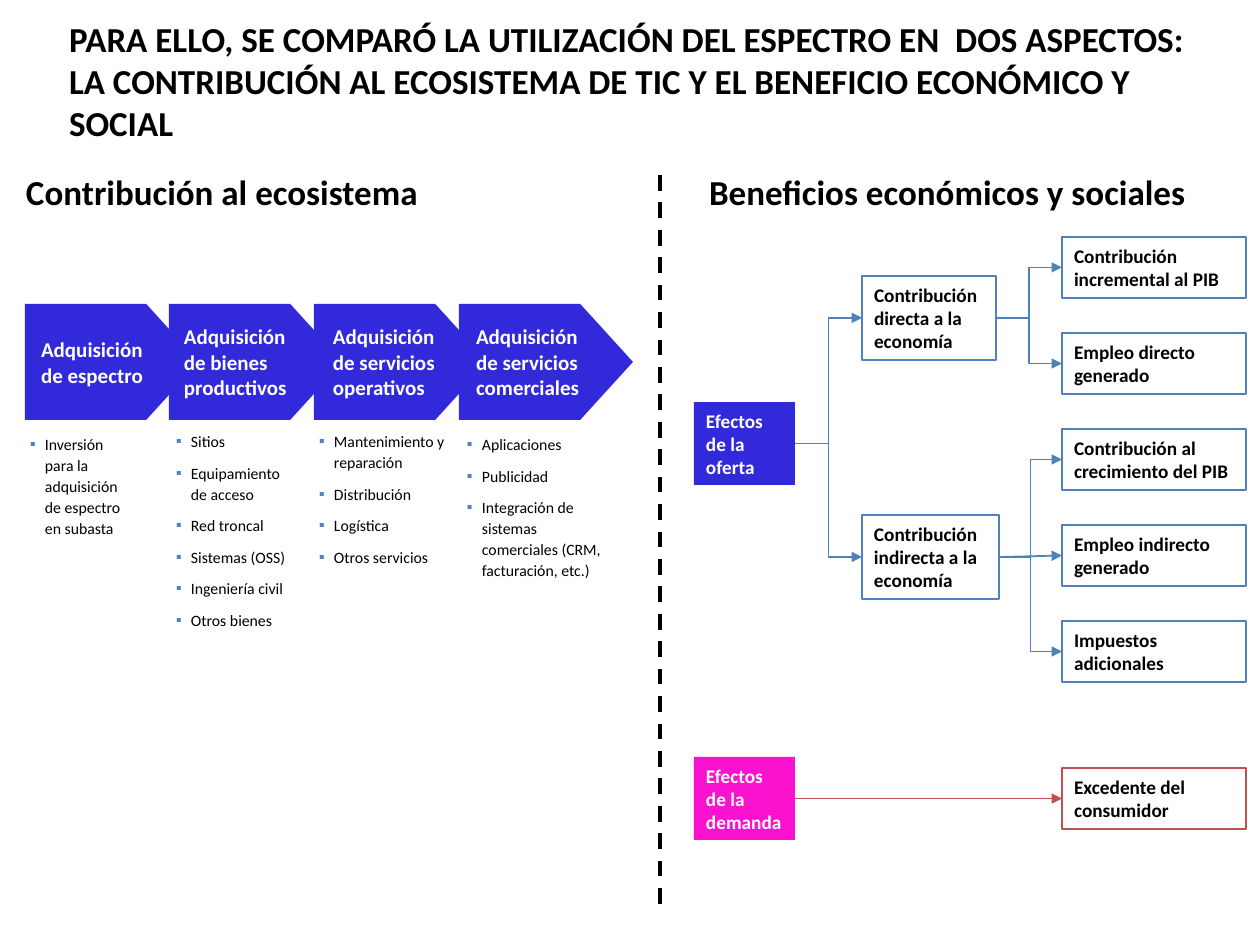
"""Build the slide on spectrum use: ecosystem contribution and economic benefits."""
from pptx import Presentation
from pptx.dml.color import RGBColor
from pptx.enum.dml import MSO_LINE_DASH_STYLE as Dash
from pptx.enum.shapes import MSO_CONNECTOR as Connector, MSO_SHAPE as Shape
from pptx.enum.text import MSO_ANCHOR as Anchor, MSO_AUTO_SIZE as AutoSize, PP_ALIGN as Align
from pptx.oxml.ns import qn
from pptx.util import Pt
from lxml.etree import SubElement

COLORS = {"black": "000000", "white": "FFFFFF", "indigo": "322ADA",
          "magenta": "FA12CE", "blue": "4F81BD", "red": "C0504D"}
SCALE = 914400 / 126
LEFT_SITE, RIGHT_SITE = 1, 3


def px(*lengths):
    return [round(length * SCALE) for length in lengths]


def rgb(name):
    return RGBColor.from_string(COLORS[name])


def set_values(target, **values):
    for name, value in values.items():
        setattr(target, name, value)


class SlideBuilder:
    def __init__(self, slide, font="Calibri"):
        self.slide, self.font = slide, font

    def set_text(self, shape, lines, size, color="black", bold=True, inset=(0, 0),
                 anchor=Anchor.TOP):
        frame = shape.text_frame
        frame.text = "\n".join(lines)
        across, down = px(*inset)
        set_values(frame, word_wrap=True, auto_size=AutoSize.NONE, vertical_anchor=anchor,
                   margin_left=across, margin_right=across, margin_top=down, margin_bottom=down)
        for paragraph in frame.paragraphs:
            paragraph.alignment = Align.LEFT
            for run in paragraph.runs:
                set_values(run.font, name=self.font, size=Pt(size), bold=bold)
                run.font.color.rgb = rgb(color)
        return shape

    def place(self, shape, *box):
        set_values(shape, **dict(zip(("left", "top", "width", "height"), px(*box))))
        return shape

    def title(self, text, *box):
        self.set_text(self.place(self.slide.shapes.title, *box), [text], 20)

    def text(self, text, size, color, *box):
        self.set_text(self.slide.shapes.add_textbox(*px(*box)), [text], size, color)

    def bullets(self, index, items, *box):
        shape = self.place(self.slide.placeholders[index], *box)
        self.set_text(shape, items, 9, bold=False)
        for paragraph in shape.text_frame.paragraphs:
            set_values(paragraph, line_spacing=Pt(12), space_before=Pt(6))
            properties = paragraph._p.get_or_add_pPr()
            indent = px(15)[0]
            properties.set("marL", str(indent))
            properties.set("indent", str(-indent))
            color = SubElement(properties, qn("a:buClr"))
            SubElement(color, qn("a:srgbClr"), val=COLORS["blue"])
            SubElement(properties, qn("a:buFont"), typeface=self.font)
            SubElement(properties, qn("a:buChar"), char="▪")

    def shape(self, kind, *box, fill=None, line=None):
        shape = self.slide.shapes.add_shape(kind, *px(*box))
        shape.shadow.inherit = False
        for part, color in ((shape.fill, fill), (shape.line.fill, line)):
            if color:
                part.solid()
                part.fore_color.rgb = rgb(color)
            else:
                part.background()
        if line:
            shape.line.width = Pt(1)
        return shape

    def arrow_block(self, *box):
        self.shape(Shape.PENTAGON, *box, fill="indigo").adjustments[0] = 0.455

    def box(self, text, *box, fill=None, line=None):
        shape = self.shape(Shape.RECTANGLE, *box, fill=fill, line=line)
        return self.set_text(shape, [text], 11, "white" if fill else "black",
                             inset=(12, 6), anchor=Anchor.MIDDLE)

    def line(self, kind, color, width, *ends):
        connector = self.slide.shapes.add_connector(kind, *px(*ends))
        connector.line.color.rgb = rgb(color)
        connector.line.width = Pt(width)
        SubElement(connector._element.spPr, qn("a:effectLst"))
        return connector

    def divider(self, *ends):
        self.line(Connector.STRAIGHT, "black", 2.25, *ends).line.dash_style = Dash.DASH

    def arrow(self, source, target, color="blue", kind=Connector.ELBOW):
        connector = self.line(kind, color, 1, 0, 0, 0, 0)
        connector.begin_connect(source, RIGHT_SITE)
        connector.end_connect(target, LEFT_SITE)
        outline = connector._element.spPr.find(qn("a:ln"))
        SubElement(outline, qn("a:tailEnd"), type="triangle")


STAGES = [
    ("Adquisición de espectro", (41, 337, 121, 50), (30, 433, 95, 105),
     ["Inversión para la adquisición de espectro en subasta"]),
    ("Adquisición de bienes productivos", (184, 324, 127, 77), (176, 430, 116, 199),
     ["Sitios", "Equipamiento de acceso", "Red troncal", "Sistemas (OSS)",
      "Ingeniería civil", "Otros bienes"]),
    ("Adquisición de servicios operativos", (333, 324, 127, 77), (319, 430, 126, 137),
     ["Mantenimiento y reparación", "Distribución", "Logística", "Otros servicios"]),
    ("Adquisición de servicios comerciales", (476, 324, 122, 77), (467, 433, 136, 147),
     ["Aplicaciones", "Publicidad",
      "Integración de sistemas comerciales (CRM, facturación, etc.)"]),
]
OUTCOMES = ["Contribución incremental al PIB", "Empleo directo generado",
            "Contribución al crecimiento del PIB", "Empleo indirecto generado",
            "Impuestos adicionales"]


def main():
    presentation = Presentation()
    set_values(presentation, **dict(zip(("slide_width", "slide_height"), px(1260, 945))))
    builder = SlideBuilder(presentation.slides.add_slide(presentation.slide_layouts[4]))

    builder.title("PARA ELLO, SE COMPARÓ LA UTILIZACIÓN DEL ESPECTRO EN  DOS ASPECTOS: "
                  "LA CONTRIBUCIÓN AL ECOSISTEMA DE TIC Y EL BENEFICIO ECONÓMICO Y SOCIAL",
                  69, 17, 1126, 127)
    builder.text("Contribución al ecosistema", 20, "black", 26, 170, 432, 43)
    builder.text("Beneficios económicos y sociales", 20, "black", 709, 170, 496, 43)
    builder.divider(660, 175, 660, 906)

    for index, (name, label_box, list_box, items) in enumerate(STAGES):
        builder.arrow_block(25 + index * 434 // 3, 304, 174, 116)
        builder.text(name, 12, "white", *label_box)
        builder.bullets(index + 1, items, *list_box)

    supply = builder.box("Efectos de la oferta", 694, 402, 101, 83, fill="indigo")
    demand = builder.box("Efectos de la demanda", 694, 757, 101, 83, fill="magenta")
    direct = builder.box("Contribución directa a la economía", 862, 276, 134, 84, line="blue")
    indirect = builder.box("Contribución indirecta a la economía", 862, 515, 137, 84, line="blue")
    outcomes = [builder.box(text, 1062, 237 + 96 * row, 184, 61, line="blue")
                for row, text in enumerate(OUTCOMES)]
    surplus = builder.box("Excedente del consumidor", 1062, 768, 184, 61, line="red")

    for source, targets in ((supply, (direct, indirect)), (direct, outcomes[:2]),
                            (indirect, outcomes[2::2])):
        for target in targets:
            builder.arrow(source, target)
    builder.arrow(indirect, outcomes[3], kind=Connector.STRAIGHT)
    builder.arrow(demand, surplus, "red")
    presentation.save("out.pptx")


if __name__ == "__main__":
    main()
